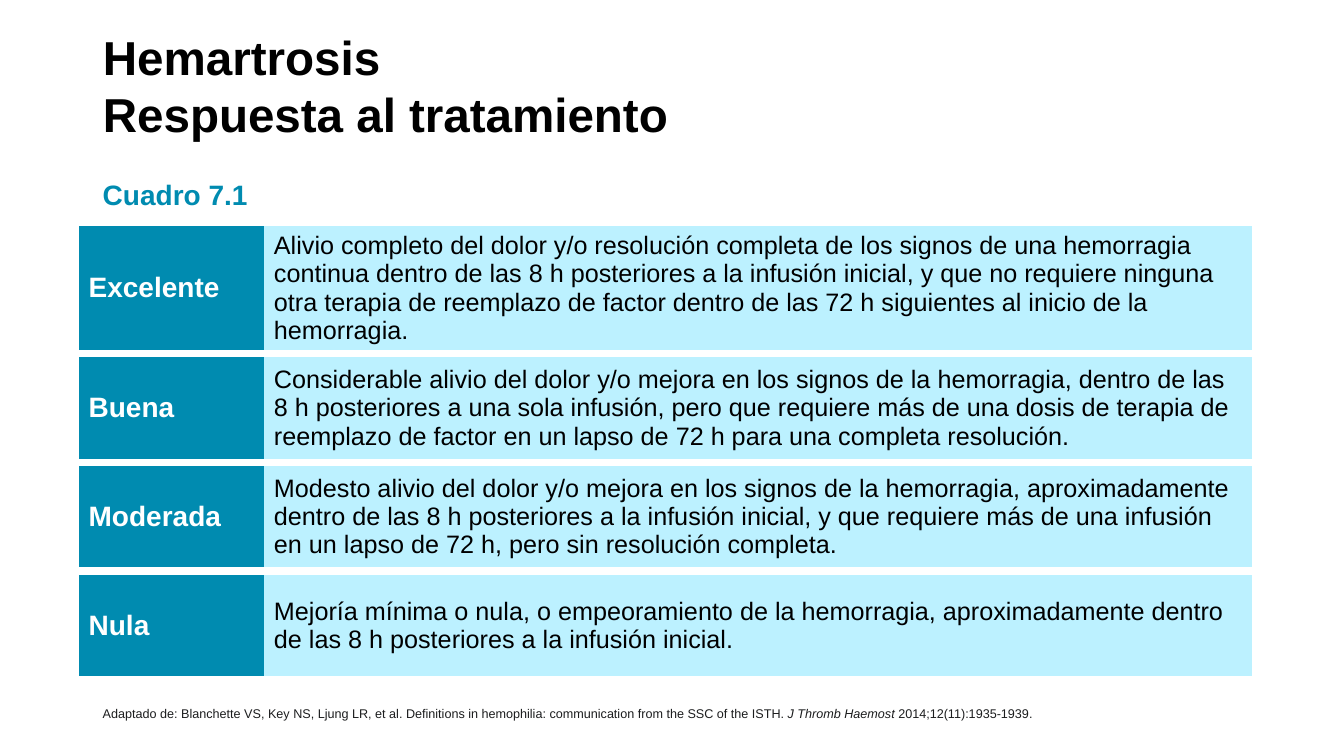
from lxml.etree import SubElement
from pptx import Presentation
from pptx.dml.color import RGBColor
from pptx.enum.text import MSO_ANCHOR as Anchor, MSO_AUTO_SIZE as AutoSize, PP_ALIGN as Align
from pptx.oxml.ns import qn
from pptx.util import Cm, Pt

TEAL, PALE, WHITE, BLACK, INK = "008BB0", "BCF1FF", "FFFFFF", "000000", "1C1D1E"
LEFT = 2.34
ROW_HEIGHT = 2.74
COLUMN_WIDTHS = (4.67, 24.89)

RESPONSES = [
    ("Excelente", "Alivio completo del dolor y/o resolución completa de los signos de una hemorragia "
     "continua dentro de las 8 h posteriores a la infusión inicial, y que no requiere ninguna otra "
     "terapia de reemplazo de factor dentro de las 72 h siguientes al inicio de la hemorragia."),
    ("Buena", "Considerable alivio del dolor y/o mejora en los signos de la hemorragia, dentro de las "
     "8 h posteriores a una sola infusión, pero que requiere más de una dosis de terapia de "
     "reemplazo de factor en un lapso de 72 h para una completa resolución."),
    ("Moderada", "Modesto alivio del dolor y/o mejora en los signos de la hemorragia, aproximadamente "
     "dentro de las 8 h posteriores a la infusión inicial, y que requiere más de una infusión en un "
     "lapso de 72 h, pero sin resolución completa."),
    ("Nula", "Mejoría mínima o nula, o empeoramiento de la hemorragia, aproximadamente dentro de las "
     "8 h posteriores a la infusión inicial."),
]


def rgb(color):
    return RGBColor.from_string(color)


def add_span(para, text, size, color, bold=False, italic=False):
    span = para.add_run()
    span.text = text
    font = span.font
    font.name, font.size, font.bold, font.italic = "Arial", Pt(size), bold, italic
    font.color.rgb = rgb(color)


def add_title(page, lines):
    title = page.shapes.title
    title.left, title.top, title.width, title.height = Cm(LEFT), Cm(0.64), Cm(29.21), Cm(3.02)
    frame = title.text_frame
    frame.auto_size = AutoSize.NONE
    frame.vertical_anchor = Anchor.MIDDLE
    para = frame.paragraphs[0]
    para.alignment = Align.LEFT
    for index, line in enumerate(lines):
        if index:
            para.add_line_break()
        add_span(para, line, 34, BLACK, bold=True)


def add_text_box(page, top, width, height, anchor=Anchor.TOP):
    """Add an empty wrapping box at the left margin and return its text frame."""
    box = page.shapes.add_textbox(Cm(LEFT), Cm(top), Cm(width), Cm(height))
    frame = box.text_frame
    frame.word_wrap = True
    frame.vertical_anchor = anchor
    return frame


def set_borders(cell):
    """Leave the sides open and draw wide white rules above and below."""
    properties = cell._tc.get_or_add_tcPr()
    for position, tag in enumerate(("a:lnL", "a:lnR", "a:lnT", "a:lnB")):
        line = SubElement(properties, qn(tag))
        properties.insert(position, line)
        if tag in ("a:lnL", "a:lnR"):
            SubElement(line, qn("a:noFill"))
        else:
            line.set("w", str(Pt(6)))
            fill = SubElement(line, qn("a:solidFill"))
            SubElement(fill, qn("a:srgbClr"), val=WHITE)


def fill_cell(cell, text, size, color, background, bold=False):
    cell.fill.solid()
    cell.fill.fore_color.rgb = rgb(background)
    cell.vertical_anchor = Anchor.MIDDLE
    add_span(cell.text_frame.paragraphs[0], text, size, color, bold)
    set_borders(cell)


def add_response_table(page):
    frame = page.shapes.add_table(len(RESPONSES), len(COLUMN_WIDTHS), Cm(1.98), Cm(5.61),
                                  Cm(sum(COLUMN_WIDTHS)), Cm(ROW_HEIGHT * len(RESPONSES)))
    table = frame.table
    table.first_row = table.horz_banding = False
    for column, width in zip(table.columns, COLUMN_WIDTHS):
        column.width = Cm(width)
    for row, (grade, description) in zip(table.rows, RESPONSES):
        row.height = Cm(ROW_HEIGHT)
        fill_cell(row.cells[0], grade, 20, WHITE, TEAL, bold=True)
        fill_cell(row.cells[1], description, 18, BLACK, PALE)


def main():
    deck = Presentation()
    deck.slide_width, deck.slide_height = Cm(33.87), Cm(19.05)
    page = deck.slides.add_slide(deck.slide_layouts[5])

    add_title(page, ["Hemartrosis", "Respuesta al tratamiento"])
    caption = add_text_box(page, 4.34, 29.21, 1.27)
    add_span(caption.paragraphs[0], "Cuadro 7.1", 20, TEAL, bold=True)
    add_response_table(page)

    source = add_text_box(page, 17.15, 27.56, 1.02, Anchor.BOTTOM)
    source.margin_bottom = 0
    para = source.paragraphs[0]
    add_span(para, "Adaptado de: Blanchette VS, Key NS, Ljung LR, et al. Definitions in hemophilia: "
             "communication from the SSC of the ISTH. ", 9, INK)
    add_span(para, "J Thromb Haemost ", 9, INK, italic=True)
    add_span(para, "2014;12(11):1935-1939.", 9, INK)

    deck.save("out.pptx")


if __name__ == "__main__":
    main()
